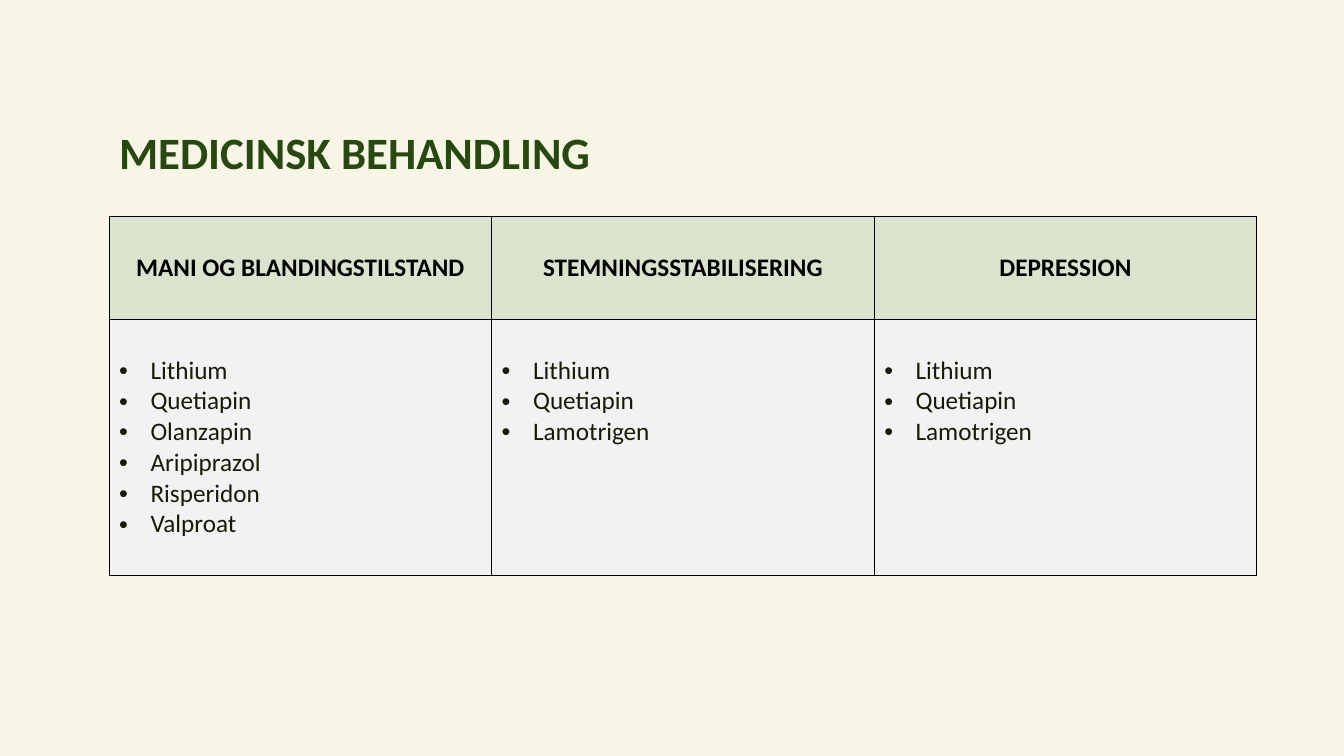
import pptx
import pptx.util
import pptx.dml.color
import pptx.enum.text
import pptx.oxml
import pptx.oxml.ns
from pptx.util import Cm

FONT = "Calibri"
COLORS = {
    "background": "F7F6E6",
    "title": "294711",
    "header_fill": "D9E3CE",
    "header_text": "000000",
    "body_fill": "F2F2F2",
    "body_text": "1A1908",
    "border": "000000",
}
TREATMENTS = {
    "MANI OG BLANDINGSTILSTAND": [
        "Lithium", "Quetiapin", "Olanzapin", "Aripiprazol", "Risperidon", "Valproat"],
    "STEMNINGSSTABILISERING": ["Lithium", "Quetiapin", "Lamotrigen"],
    "DEPRESSION": ["Lithium", "Quetiapin", "Lamotrigen"],
}
MIDDLE = pptx.enum.text.MSO_ANCHOR.MIDDLE


def rgb(name):
    return pptx.dml.color.RGBColor.from_string(COLORS[name])


def add_run(p, text, size, color, bold=False):
    r = p.add_run()
    r.text = text
    r.font.name = FONT
    r.font.size = pptx.util.Pt(size)
    r.font.bold = bold
    r.font.color.rgb = rgb(color)


def add_bullet(p, indent):
    pPr = p._p.get_or_add_pPr()
    pPr.set("marL", str(indent))
    pPr.set("indent", str(-indent))
    for tag, attr, value in (("buFont", "typeface", "Arial"), ("buChar", "char", "•")):
        bullet = pptx.oxml.parse_xml(
            f'<a:{tag} {pptx.oxml.ns.nsdecls("a")} {attr}="{value}"/>')
        pPr.append(bullet)


def style_cell(cell, fill):
    """Draw a thin border on all four sides and fill the cell."""
    tcPr = cell._tc.get_or_add_tcPr()
    for side in "LRTB":
        tcPr.append(pptx.oxml.parse_xml(
            f'<a:ln{side} {pptx.oxml.ns.nsdecls("a")} w="{pptx.util.Pt(1)}"><a:solidFill>'
            f'<a:srgbClr val="{COLORS["border"]}"/></a:solidFill></a:ln{side}>'))
    cell.fill.solid()
    cell.fill.fore_color.rgb = rgb(fill)


def add_title(s, text, left, top, width, height):
    tf = s.shapes.add_textbox(left, top, width, height).text_frame
    tf.word_wrap = True
    tf.vertical_anchor = MIDDLE
    p = tf.paragraphs[0]
    p.line_spacing = 0.9
    add_run(p, text, 32, "title", bold=True)


def add_treatment_table(s, treatments, left, top, width, height):
    """Place one column per phase: a heading above a list of medicines."""
    table = s.shapes.add_table(2, len(treatments), left, top, width, height).table
    header_height = Cm(2.6)
    table.rows[0].height = header_height
    table.rows[1].height = height - header_height
    for col, (phase, medicines) in enumerate(treatments.items()):
        header, body = table.cell(0, col), table.cell(1, col)
        style_cell(header, "header_fill")
        header.vertical_anchor = MIDDLE
        p = header.text_frame.paragraphs[0]
        p.alignment = pptx.enum.text.PP_ALIGN.CENTER
        add_run(p, phase, 18, "header_text", bold=True)

        style_cell(body, "body_fill")
        body.margin_top = Cm(0.9)
        tf = body.text_frame
        for i, medicine in enumerate(medicines):
            p = tf.add_paragraph() if i else tf.paragraphs[0]
            add_bullet(p, Cm(0.79))
            add_run(p, medicine, 18, "body_text")


def main():
    prs = pptx.Presentation()
    prs.slide_width, prs.slide_height = Cm(33.87), Cm(19.05)
    s = prs.slides.add_slide(prs.slide_layouts[6])
    s.background.fill.solid()
    s.background.fill.fore_color.rgb = rgb("background")
    left = Cm(2.75)
    add_title(s, "MEDICINSK BEHANDLING", left, Cm(2.85), Cm(29.2), Cm(2.13))
    add_treatment_table(s, TREATMENTS, left, Cm(5.45), Cm(28.92), Cm(9.05))
    prs.save("out.pptx")


if __name__ == "__main__":
    main()
